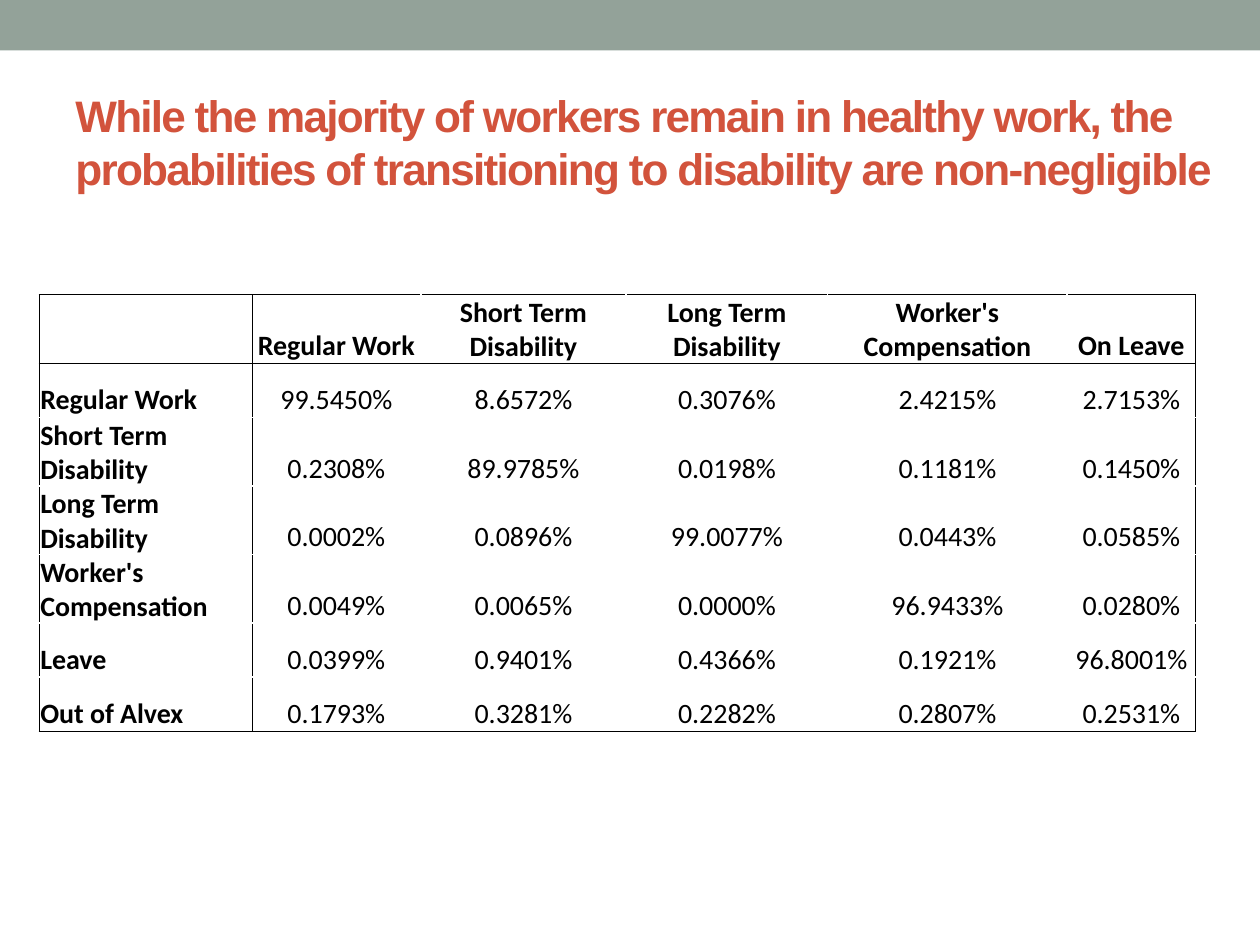
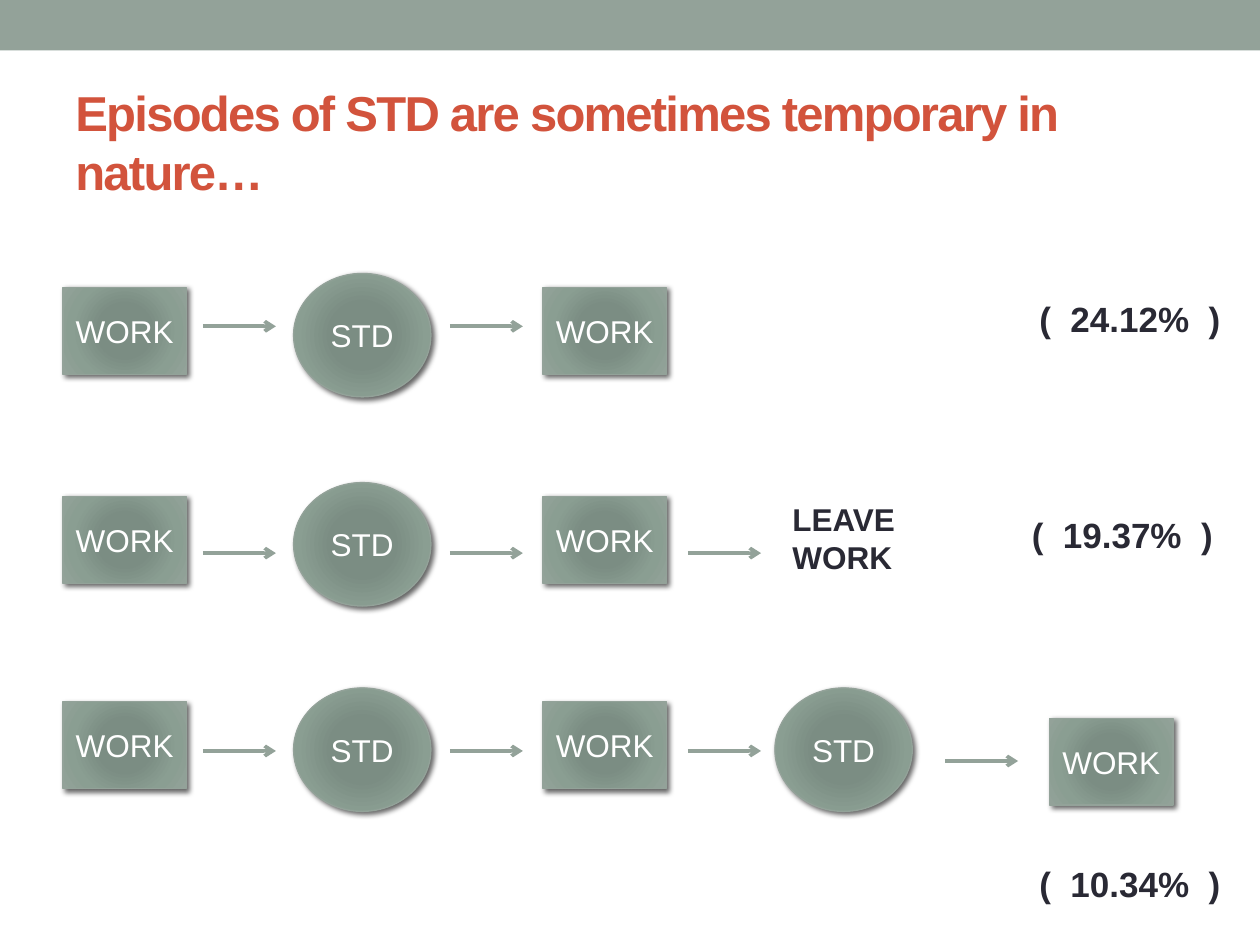
from dataclasses import dataclass

from pptx import Presentation
from pptx.dml.color import RGBColor
from pptx.enum.shapes import MSO_CONNECTOR, MSO_SHAPE
from pptx.enum.text import MSO_ANCHOR, PP_ALIGN
from pptx.oxml import parse_xml
from pptx.oxml.ns import nsdecls, qn
from pptx.util import Inches, Pt


@dataclass(frozen=True)
class Theme:
    sage: str = "93A299"
    rust: str = "D2533C"
    ink: str = "292934"
    black: str = "000000"
    white: str = "FFFFFF"
    node_stops: tuple = ((0, "7B8E82"), (34, "7B8D83"), (70, "8A9E92"), (100, "93A299"))
    font: str = "Arial"
    table_font: str = "Calibri"
    title_size: float = 28
    long_title_size: float = 25.2
    share_size: float = 20
    node_size: float = 18
    table_size: float = 16


T = Theme()

# Transition probabilities, in percent
STATES = ["Regular Work", "Short Term Disability", "Long Term Disability",
          "Worker's Compensation", "On Leave"]
TRANSITIONS = [
    ("Regular Work", 99.5450, 8.6572, 0.3076, 2.4215, 2.7153),
    ("Short Term Disability", 0.2308, 89.9785, 0.0198, 0.1181, 0.1450),
    ("Long Term Disability", 0.0002, 0.0896, 99.0077, 0.0443, 0.0585),
    ("Worker's Compensation", 0.0049, 0.0065, 0.0000, 96.9433, 0.0280),
    ("Leave", 0.0399, 0.9401, 0.4366, 0.1921, 96.8001),
    ("Out of Alvex", 0.1793, 0.3281, 0.2282, 0.2807, 0.2531),
]
COL_WIDTHS = [1.69, 1.34, 1.63, 1.6, 1.9, 1.02]
ROW_HEIGHT = 0.43

# Episode paths: top of the boxes, arrow height, steps, share and its place
EPISODES = [
    (2.28, 2.59, ["WORK", "STD", "WORK"], "24.12%", 8.15, 2.31),
    (3.94, 4.39, ["WORK", "STD", "WORK", "LEAVE"], "19.37%", 8.09, 4.03),
    (5.57, 5.96, ["WORK", "STD", "WORK", "STD", "WORK"], "10.34%", 8.15, 6.8),
]
STEP_LEFTS = [0.5, 2.33, 4.31, 6.15, 8.33]
ARROW_LEFTS = [1.61, 3.57, 5.46, 7.5]
ARROW_LENGTH = 0.58
LAST_STEP_DROP, LAST_ARROW_DROP = 0.13, 0.08


def rgb(color):
    return RGBColor.from_string(color)


def add_run(p, text, size, color, bold=False, font=T.font):
    r = p.add_run()
    r.text = text
    r.font.name, r.font.size, r.font.bold = font, Pt(size), bold
    r.font.color.rgb = rgb(color)
    return r


def add_text(s, lines, left, top, width, height, size, color,
             wrap=False, anchor=MSO_ANCHOR.TOP):
    tf = s.shapes.add_textbox(Inches(left), Inches(top), Inches(width), Inches(height)).text_frame
    tf.word_wrap = wrap
    tf.vertical_anchor = anchor
    for i, line in enumerate(lines):
        p = tf.add_paragraph() if i else tf.paragraphs[0]
        add_run(p, line, size, color, bold=True)
    return tf


def add_titled_slide(prs, title, size=T.title_size, width=9):
    s = prs.slides.add_slide(prs.slide_layouts[6])
    band = s.shapes.add_shape(MSO_SHAPE.RECTANGLE, 0, 0, prs.slide_width, Inches(0.4))
    band.shadow.inherit = False
    band.fill.solid()
    band.fill.fore_color.rgb = rgb(T.sage)
    band.line.fill.background()
    tf = add_text(s, [title], 0.5, 0.58, width, 1.08, size, T.rust,
                  wrap=True, anchor=MSO_ANCHOR.MIDDLE)
    # Tight letter spacing of one point
    tf.paragraphs[0].runs[0].font._element.set("spc", "-100")
    return s


def add_border(cell, side):
    cell._tc.get_or_add_tcPr().append(parse_xml(
        f'<a:ln{side} {nsdecls("a")} w="6350"><a:solidFill><a:srgbClr val="{T.black}"/>'
        f'</a:solidFill></a:ln{side}>'))


def add_transition_table(s):
    rows = [["", *STATES]]
    rows += [[name, *(f"{v:.4f}%" for v in values)] for name, *values in TRANSITIONS]
    n_rows, n_cols = len(rows), len(COL_WIDTHS)
    table = s.shapes.add_table(n_rows, n_cols, Inches(0.31), Inches(2.34),
                               Inches(sum(COL_WIDTHS)), Inches(ROW_HEIGHT * n_rows)).table
    table.first_row = table.horz_banding = False
    for column, width in zip(table.columns, COL_WIDTHS):
        column.width = Inches(width)
    for i, row in enumerate(rows):
        table.rows[i].height = Inches(ROW_HEIGHT)
        for j, text in enumerate(row):
            cell = table.cell(i, j)
            # Frame, header rule and label rule
            edges = {"L": j < 2, "R": j in (0, n_cols - 1),
                     "T": i < 2, "B": i in (0, n_rows - 1)}
            for side, shown in edges.items():
                if shown:
                    add_border(cell, side)
            cell.fill.solid()
            cell.fill.fore_color.rgb = rgb(T.white)
            cell.vertical_anchor = MSO_ANCHOR.BOTTOM
            cell.margin_left = cell.margin_right = cell.margin_top = Inches(0.01)
            cell.margin_bottom = 0
            p = cell.text_frame.paragraphs[0]
            p.alignment = PP_ALIGN.CENTER if j else PP_ALIGN.LEFT
            if text:
                add_run(p, text, T.table_size, T.black, i == 0 or j == 0, T.table_font)


def add_node(s, text, left, top):
    if text == "STD":
        kind, width, height, top = MSO_SHAPE.OVAL, 1.09, 0.98, top - 0.11
    else:
        kind, width, height = MSO_SHAPE.RECTANGLE, 0.98, 0.69
    sp = s.shapes.add_shape(kind, Inches(left), Inches(top), Inches(width), Inches(height))
    sp.line.color.rgb = rgb(T.sage)
    sp.line.width = Pt(0.75)
    # Radial gradient
    sp.fill.background()
    stops = "".join(f'<a:gs pos="{pos * 1000}"><a:srgbClr val="{color}"/></a:gs>'
                    for pos, color in T.node_stops)
    spPr = sp._element.spPr
    spPr.replace(spPr.find(qn("a:noFill")), parse_xml(
        f'<a:gradFill {nsdecls("a")} rotWithShape="1"><a:gsLst>{stops}</a:gsLst>'
        '<a:path path="circle"><a:fillToRect l="100000" t="100000" r="100000" b="100000"/>'
        '</a:path></a:gradFill>'))
    # Soft shadow to the lower right
    sp.shadow.inherit = False
    spPr.find(qn("a:effectLst")).append(parse_xml(
        f'<a:outerShdw {nsdecls("a")} blurRad="38100" dist="25400" dir="2700000" '
        f'rotWithShape="0"><a:srgbClr val="{T.black}"><a:alpha val="60000"/></a:srgbClr>'
        '</a:outerShdw>'))
    tf = sp.text_frame
    tf.word_wrap = True
    tf.vertical_anchor = MSO_ANCHOR.MIDDLE
    p = tf.paragraphs[0]
    p.alignment = PP_ALIGN.CENTER
    add_run(p, text, T.node_size, T.white)


def add_arrow(s, left, y):
    line = s.shapes.add_connector(MSO_CONNECTOR.STRAIGHT, Inches(left), Inches(y),
                                  Inches(left + ARROW_LENGTH), Inches(y))
    line.line.color.rgb = rgb(T.sage)
    line.line.width = Pt(2.08)
    line.line._get_or_add_ln().append(parse_xml(f'<a:tailEnd {nsdecls("a")} type="arrow"/>'))
    line._element.spPr.append(parse_xml(f'<a:effectLst {nsdecls("a")}/>'))


def add_episode(s, top, arrow_y, steps, share, share_left, share_top):
    last = len(STEP_LEFTS) - 1
    for i, step in enumerate(steps):
        if step == "LEAVE":
            add_text(s, ["LEAVE", "WORK"], 6.19, 3.92, 1.02, 0.71, T.node_size, T.ink)
        else:
            add_node(s, step, STEP_LEFTS[i], top + (LAST_STEP_DROP if i == last else 0))
        if i:
            add_arrow(s, ARROW_LEFTS[i - 1], arrow_y + (LAST_ARROW_DROP if i == last else 0))
    add_text(s, [f"(  {share}  )"], share_left, share_top, 1.65, 0.44, T.share_size, T.ink)


def main():
    prs = Presentation()
    prs.slide_width, prs.slide_height = Inches(10), Inches(7.5)

    # Slide 1: transition table
    s = add_titled_slide(prs, "While the majority of workers remain in healthy work, the "
                         "probabilities of transitioning to disability are non-negligible",
                         T.long_title_size, 9.31)
    add_transition_table(s)

    # Slide 2: episode paths
    s = add_titled_slide(prs, "Episodes of STD are sometimes temporary in nature…")
    for episode in EPISODES:
        add_episode(s, *episode)

    prs.save("out.pptx")


if __name__ == "__main__":
    main()
